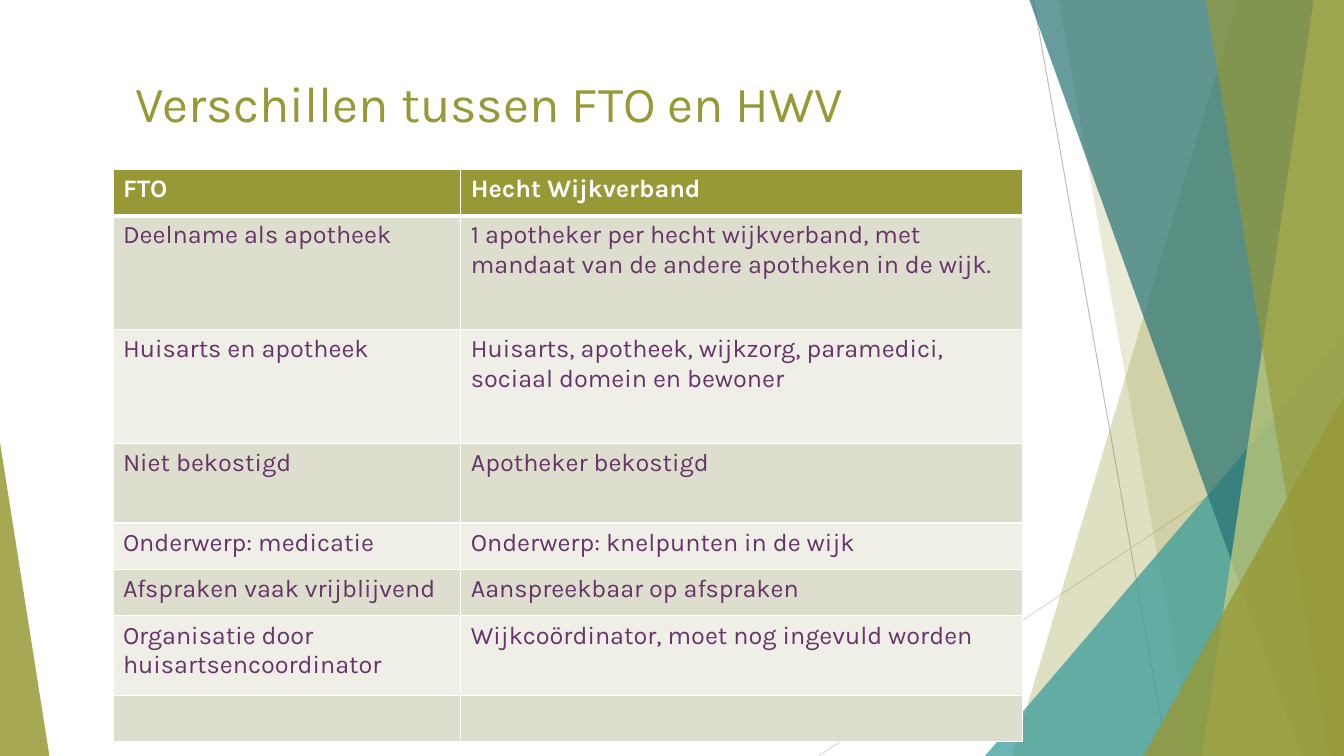
"""Build the slide comparing FTO with the Hecht Wijkverband."""
from typing import NamedTuple

from lxml import etree
from pptx import Presentation
from pptx.dml.color import RGBColor
from pptx.enum.shapes import MSO_CONNECTOR, MSO_SHAPE
from pptx.oxml.ns import qn
from pptx.util import Inches, Pt

STRAIGHT = MSO_CONNECTOR.STRAIGHT
TRIANGLE = MSO_SHAPE.ISOSCELES_TRIANGLE
WIDTH, HEIGHT = 13.33, 7.5
FONT = "Karla"
OLIVE, PURPLE, WHITE = "979936", "663468", "FFFFFF"
STRIPES = ("EFEFE8", "DDDECE")


class Ray(NamedTuple):
    start: tuple[float, float]
    end: tuple[float, float]
    color: str


class Band(NamedTuple):
    """Area between a slanted left edge and the right side of the slide."""
    top_x: float
    bottom_x: float
    color: str
    opacity: int


class Wedge(NamedTuple):
    """Triangle standing on the bottom of the slide."""
    left: float
    top: float
    width: float
    apex: float
    color: str
    opacity: int


RAYS = (
    Ray((10.25, 0), (11.58, HEIGHT), "BFBFBF"),
    Ray((WIDTH, 4.03), (8.12, HEIGHT), "D9D9D9"),
)
FACETS = (
    Band(12.28, 10.04, OLIVE, 30),
    Band(10.5, 11.83, OLIVE, 20),
    Wedge(9.77, 3.33, 3.56, 1, "349999", 72),
    Band(10.21, 12.91, "277373", 70),
    Band(13.03, 11.92, "CED079", 70),
    Band(11.96, 13.18, OLIVE, 65),
    Wedge(11.34, 3.93, 1.99, 1, OLIVE, 80),
    Wedge(0, 4.39, 0.49, 0, OLIVE, 85),
)
COLUMNS = (3.45, 5.57)
ROWS = (
    (0.46, "FTO", "Hecht Wijkverband"),
    (1.13, "Deelname als apotheek",
     "1 apotheker per hecht wijkverband, met mandaat van de andere apotheken in de wijk."),
    (1.13, "Huisarts en apotheek",
     "Huisarts, apotheek, wijkzorg, paramedici, sociaal domein en bewoner"),
    (0.79, "Niet bekostigd", "Apotheker bekostigd"),
    (0.46, "Onderwerp: medicatie", "Onderwerp: knelpunten in de wijk"),
    (0.46, "Afspraken vaak vrijblijvend", "Aanspreekbaar op afspraken"),
    (0.79, "Organisatie door huisartsencoordinator",
     "Wijkcoördinator, moet nog ingevuld worden"),
    (0.46, "", ""),
)


def rgb(color: str) -> RGBColor:
    """Turn a hex string into a colour."""
    return RGBColor.from_string(color)


def draw_ray(slide, ray: Ray) -> None:
    """Draw a thin line without a shadow."""
    points = [Inches(value) for value in (*ray.start, *ray.end)]
    line = slide.shapes.add_connector(STRAIGHT, *points)
    line.line.color.rgb = rgb(ray.color)
    line.line.width = Pt(0.75)
    etree.SubElement(line.element.spPr, qn("a:effectLst"))


def draw_facet(slide, facet: Band | Wedge) -> None:
    """Draw a translucent band or wedge."""
    if isinstance(facet, Band):
        outline = slide.shapes.build_freeform(Inches(facet.top_x), 0)
        corners = ((WIDTH, 0), (WIDTH, HEIGHT), (facet.bottom_x, HEIGHT))
        outline.add_line_segments([(Inches(x), Inches(y)) for x, y in corners])
        shape = outline.convert_to_shape()
    else:
        shape = slide.shapes.add_shape(
            TRIANGLE, Inches(facet.left), Inches(facet.top),
            Inches(facet.width), Inches(HEIGHT - facet.top))
        shape.adjustments[0] = facet.apex
    shape.shadow.inherit = False
    shape.line.fill.background()
    shape.fill.solid()
    shape.fill.fore_color.rgb = rgb(facet.color)
    color = shape.element.spPr.find(qn("a:solidFill")).find(qn("a:srgbClr"))
    etree.SubElement(color, qn("a:alpha"), val=str(facet.opacity * 1000))


def write(frame, text: str, size: float, color: str, bold: bool = False) -> None:
    """Add one formatted run to the first paragraph."""
    run = frame.paragraphs[0].add_run()
    run.text = text
    run.font.name = FONT
    run.font.size = Pt(size)
    run.font.bold = bold
    run.font.color.rgb = rgb(color)


def draw_borders(cell, top: float, bottom: float) -> None:
    """Give a cell white borders."""
    properties = cell._tc.get_or_add_tcPr()
    for side, width in (("L", 1), ("R", 1), ("T", top), ("B", bottom)):
        border = etree.SubElement(properties, qn(f"a:ln{side}"), w=str(Pt(width)))
        fill = etree.SubElement(border, qn("a:solidFill"))
        etree.SubElement(fill, qn("a:srgbClr"), val=WHITE)


def draw_comparison(slide) -> None:
    """Draw the table with its header and striped rows."""
    comparison = slide.shapes.add_table(
        len(ROWS), len(COLUMNS), Inches(1.12), Inches(1.68),
        Inches(sum(COLUMNS)), Inches(sum(row[0] for row in ROWS))).table
    comparison.horz_banding = False
    for column, width in zip(comparison.columns, COLUMNS):
        column.width = Inches(width)
    for index, (height, *texts) in enumerate(ROWS):
        comparison.rows[index].height = Inches(height)
        header = index == 0
        for column, text in enumerate(texts):
            cell = comparison.cell(index, column)
            draw_borders(cell, 3 if index == 1 else 1, 3 if header else 1)
            cell.fill.solid()
            cell.fill.fore_color.rgb = rgb(OLIVE if header else STRIPES[index % 2])
            if text:
                write(cell.text_frame, text, 18, WHITE if header else PURPLE, header)


def main() -> None:
    """Build and save the slide."""
    deck = Presentation()
    deck.slide_width, deck.slide_height = Inches(WIDTH), Inches(HEIGHT)
    slide = deck.slides.add_slide(deck.slide_layouts[6])
    for ray in RAYS:
        draw_ray(slide, ray)
    for facet in FACETS:
        draw_facet(slide, facet)
    title = slide.shapes.add_textbox(Inches(1.25), Inches(0.67), Inches(8.89), Inches(1.44))
    title.text_frame.word_wrap = True
    write(title.text_frame, "Verschillen tussen FTO en HWV", 36, OLIVE)
    draw_comparison(slide)
    deck.save("out.pptx")


if __name__ == "__main__":
    main()
